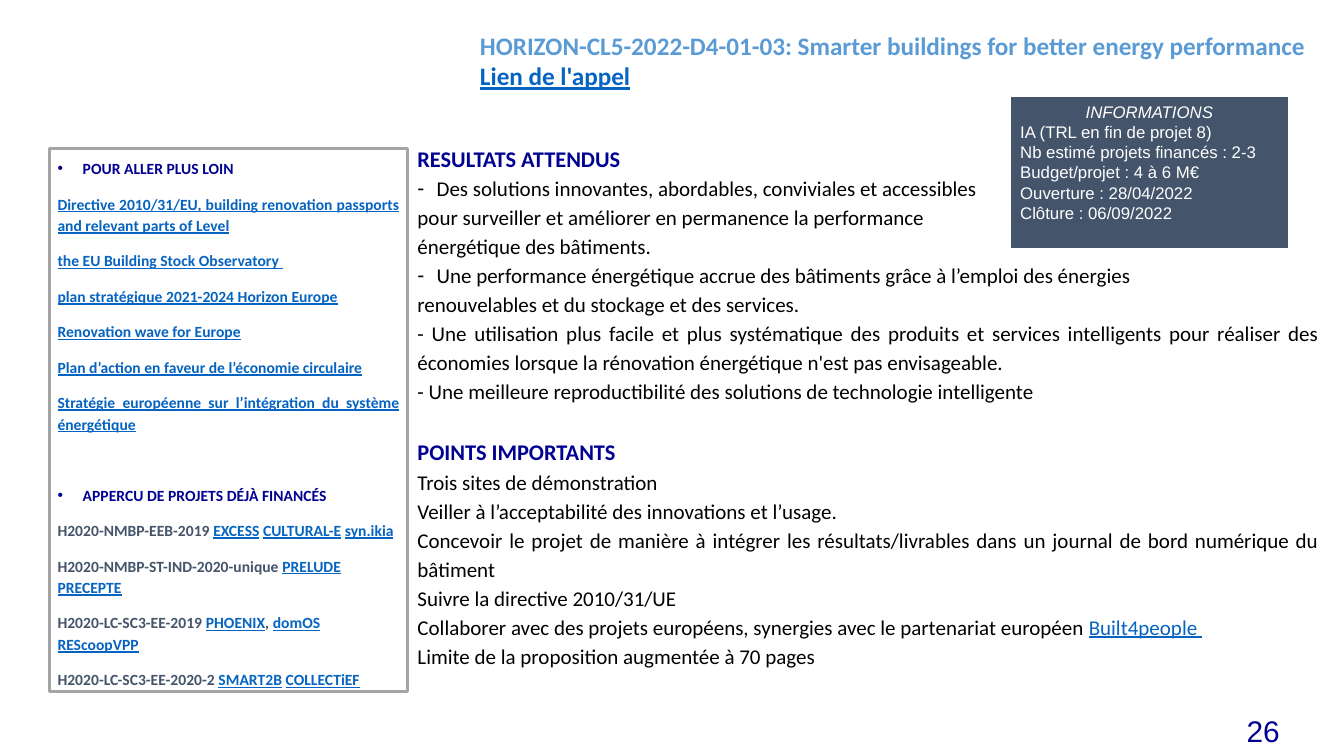
from lxml import etree
from pptx import Presentation, util as u
from pptx.dml.color import RGBColor
from pptx.enum import shapes, text
from pptx.oxml import ns

WIDTH, HEIGHT = u.Inches(13.33), u.Inches(7.5)
NAVY, LINK, SLATE, BLACK, WHITE = "000091", "0563C1", "44546A", "000000", "FFFFFF"
LEFT, RIGHT = text.PP_ALIGN.LEFT, text.PP_ALIGN.RIGHT
CENTER, JUSTIFY = text.PP_ALIGN.CENTER, text.PP_ALIGN.JUSTIFY

TITLE = ("HORIZON-CL5-2022-D4-01-03: Smarter buildings for better energy performance "
         "|Lien de l'appel|")
INFORMATION = ["IA (TRL en fin de projet 8)", "Nb estimé projets financés : 2-3",
               "Budget/projet : 4 à 6 M€", "Ouverture : 28/04/2022", "Clôture : 06/09/2022"]
REFERENCES = ["Directive 2010/31/EU, building renovation passports and relevant parts of Level",
              "the EU Building Stock Observatory ",
              "plan stratégique 2021-2024 Horizon Europe",
              "Renovation wave for Europe",
              "Plan d’action en faveur de l’économie circulaire",
              "Stratégie européenne sur l’intégration du système énergétique"]
PROJECTS = ["H2020-NMBP-EEB-2019 |EXCESS| |CULTURAL-E| |syn.ikia|",
            "H2020-NMBP-ST-IND-2020-unique |PRELUDE| |PRECEPTE|",
            "H2020-LC-SC3-EE-2019 |PHOENIX|, |domOS| |REScoopVPP|",
            "H2020-LC-SC3-EE-2020-2 |SMART2B| |COLLECTiEF|"]
RESULTS = [("Des solutions innovantes, abordables, conviviales et accessibles ", "-"),
           ("pour surveiller et améliorer en permanence la performance ", None),
           ("énergétique des bâtiments.", None),
           ("Une performance énergétique accrue des bâtiments grâce à l’emploi des énergies ", "-"),
           ("renouvelables et du stockage et des services.", None),
           ("- Une utilisation plus facile et plus systématique des produits et services "
            "intelligents pour réaliser des économies lorsque la rénovation énergétique "
            "n'est pas envisageable.", None),
           ("- Une meilleure reproductibilité des solutions de technologie intelligente", None)]
POINTS = ["Trois sites de démonstration",
          "Veiller à l’acceptabilité des innovations et l’usage.",
          "Concevoir le projet de manière à intégrer les résultats/livrables dans un journal "
          "de bord numérique du bâtiment",
          "Suivre la directive 2010/31/UE",
          "Collaborer avec des projets européens, synergies avec le partenariat européen "
          "|Built4people |",
          "Limite de la proposition augmentée à 70 pages"]


def color(value):
    """Turn a hex string into a colour."""
    return RGBColor.from_string(value)


def area(left, top, width, height):
    """Turn percentages of the slide into a box."""
    return [round(share * side / 100) for share, side in
            zip((left, top, width, height), (WIDTH, HEIGHT, WIDTH, HEIGHT))]


def place(shape, box):
    """Move a placeholder to its box and return its text frame."""
    shape.left, shape.top, shape.width, shape.height = box
    frame = shape.text_frame
    frame.word_wrap = True
    frame.auto_size = text.MSO_AUTO_SIZE.NONE
    frame.vertical_anchor = text.MSO_ANCHOR.TOP
    return frame


def set_bullet(para, bullet, indent):
    """Give a paragraph a hanging bullet, or none."""
    props = para._p.get_or_add_pPr()
    hang = u.Inches(indent) if bullet else 0
    props.set("marL", str(hang))
    props.set("indent", str(-hang))
    if bullet:
        etree.SubElement(props, ns.qn("a:buFont"), typeface="Arial")
        etree.SubElement(props, ns.qn("a:buChar"), char=bullet)
    else:
        etree.SubElement(props, ns.qn("a:buNone"))


def write(frame, marked, size, tint, font="Calibri", bold=False, italic=False,
          align=LEFT, spacing=1.0, before=0, bullet=None, indent=0.19):
    """Add a paragraph whose parts between bars look like links."""
    para = frame.paragraphs[0] if not frame.text else frame.add_paragraph()
    set_bullet(para, bullet, indent)
    para.alignment, para.line_spacing, para.space_before = align, spacing, u.Pt(before)
    for order, part in enumerate(marked.split("|")):
        if part:
            linked = order % 2 == 1
            span = para.add_run()
            span.text = part
            span.font.name, span.font.size = font, u.Pt(size)
            span.font.bold, span.font.italic, span.font.underline = bold, italic, linked
            span.font.color.rgb = color(LINK if linked else tint)


def add_title(page, box):
    """Write the name of the call."""
    write(place(page.shapes.title, box), TITLE, 18, "5B9BD5", bold=True)


def add_sidebar(page, box):
    """List further reading and funded projects in a grey frame."""
    shape = page.placeholders[1]
    frame = place(shape, box)
    shape.line.color.rgb, shape.line.width = color("A5A5A5"), u.Pt(2)
    frame.margin_left = frame.margin_right = u.Inches(0.08)
    frame.margin_top = frame.margin_bottom = u.Inches(0.08)
    look = dict(size=11.1, bold=True, spacing=1.15)
    heading = dict(look, tint=NAVY, bullet="•", indent=0.25)
    write(frame, "POUR ALLER PLUS LOIN", align=JUSTIFY, **heading)
    for reference in REFERENCES:
        write(frame, f"|{reference}|", tint=LINK, align=JUSTIFY, before=10, **look)
    write(frame, "APPERCU DE PROJETS DÉJÀ FINANCÉS", before=35.5, **heading)
    for project in PROJECTS:
        write(frame, project, tint=SLATE, before=10, **look)


def add_content(page, box):
    """Write the expected results and the important points."""
    frame = place(page.placeholders[2], box)
    look = dict(align=JUSTIFY, spacing=1.15)
    write(frame, "RESULTATS ATTENDUS", 16, NAVY, bold=True, **look)
    for result, bullet in RESULTS:
        write(frame, result, 15, BLACK, bullet=bullet, **look)
    write(frame, "POINTS IMPORTANTS", 16, NAVY, bold=True, before=22, **look)
    for point in POINTS:
        write(frame, point, 15, BLACK, **look)


def add_information(page, box):
    """Draw the dark box with the key facts."""
    shape = page.shapes.add_shape(shapes.MSO_SHAPE.RECTANGLE, *box)
    shape.shadow.inherit = False
    shape.fill.solid()
    shape.fill.fore_color.rgb = color(SLATE)
    shape.line.color.rgb, shape.line.width = color(WHITE), u.Pt(0.75)
    frame = place(shape, box)
    write(frame, "INFORMATIONS", 12, WHITE, "Arial", italic=True, align=CENTER)
    for fact in INFORMATION:
        write(frame, fact, 12, WHITE, "Arial")


def add_page_number(page, box):
    """Write the page number at the lower right."""
    frame = place(page.shapes.add_textbox(*box), box)
    frame.vertical_anchor = text.MSO_ANCHOR.MIDDLE
    write(frame, "26", 21.3, NAVY, "Arial", align=RIGHT)


def main():
    """Build the slide and save the deck."""
    deck = Presentation()
    deck.slide_width, deck.slide_height = WIDTH, HEIGHT
    page = deck.slides.add_slide(deck.slide_layouts[3])
    add_title(page, area(34.96, 3.33, 63.09, 9.47))
    add_sidebar(page, area(3.68, 19.6, 26.63, 71.87))
    add_content(page, area(30.31, 18, 68.57, 75.87))
    add_information(page, area(75.17, 12.8, 20.71, 20.13))
    add_page_number(page, area(83.12, 93.33, 12.83, 6.67))
    deck.save("out.pptx")


if __name__ == "__main__":
    main()
